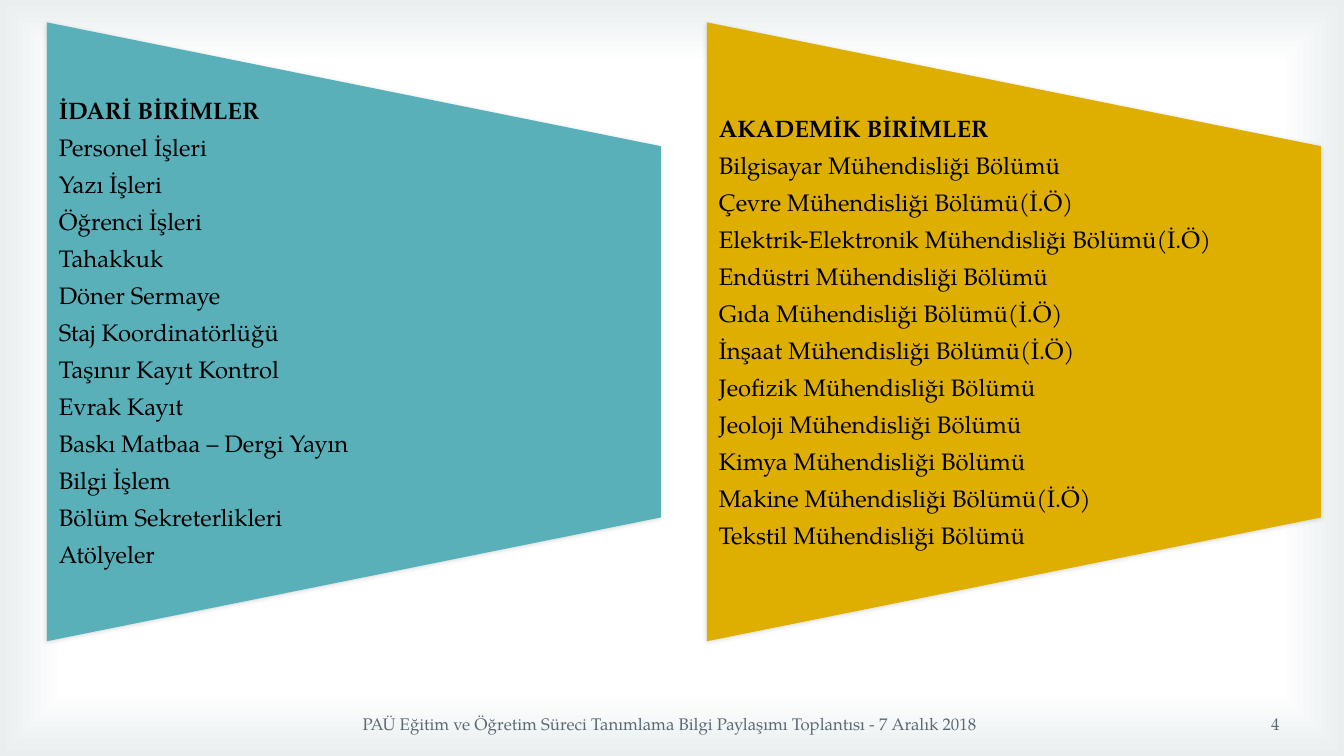
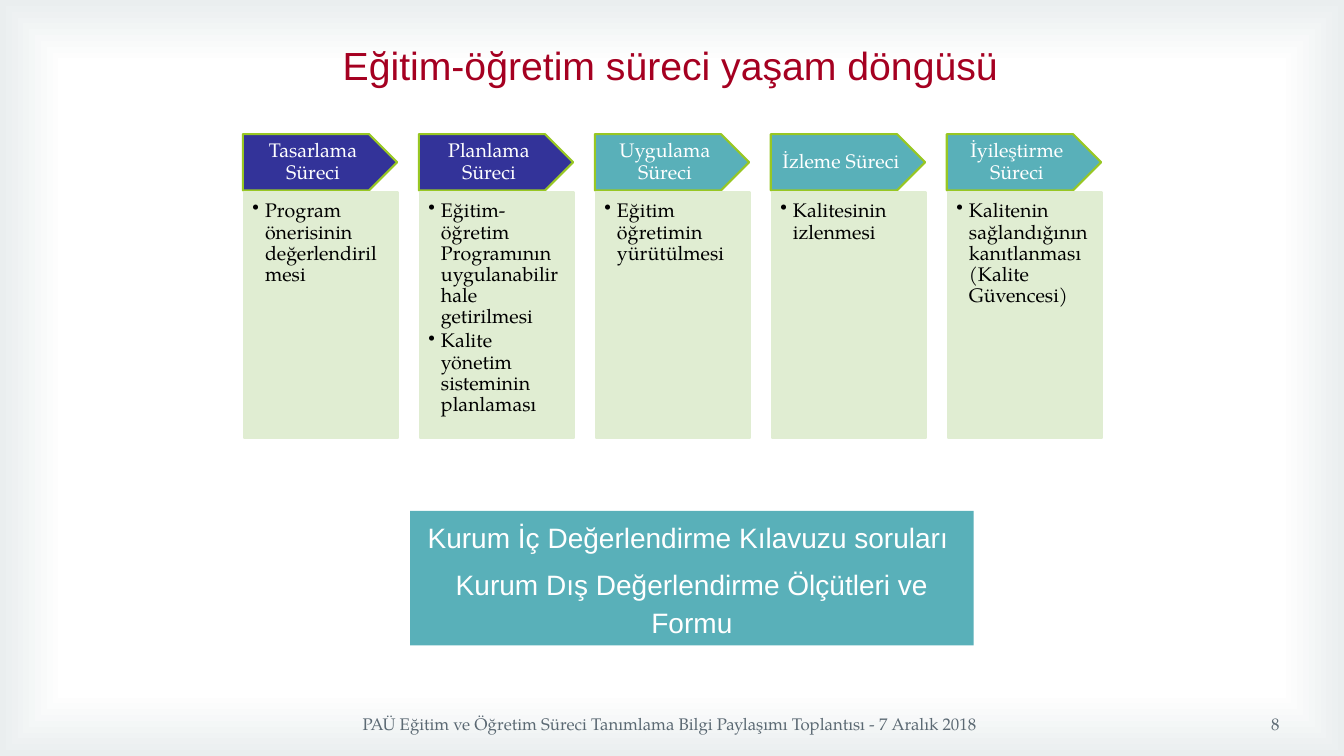
import lxml.etree
import pptx
import pptx.dml.color
import pptx.enum.shapes
import pptx.enum.text
import pptx.oxml.ns
import pptx.util

Pt = pptx.util.Pt
qn = pptx.oxml.ns.qn
SHAPES = pptx.enum.shapes.MSO_SHAPE
ALIGN = pptx.enum.text.PP_ALIGN
ANCHOR = pptx.enum.text.MSO_ANCHOR

SLIDE_WIDTH, SLIDE_HEIGHT = 960, 540
TITLE_ONLY, BLANK = 5, 6
SERIF, SANS = "TeX Gyre Pagella", "Arial"
TEAL, GOLD, INDIGO, LIME = "59B0B9", "DEAE00", "333399", "98C723"
PALE_GREEN, CRIMSON, SLATE = "E0EDD2", "A50021", "5B6973"
WHITE, BLACK, EDGE = "FFFFFF", "000000", "EAEEEF"

FOOTER = "PAÜ Eğitim ve Öğretim Süreci Tanımlama Bilgi Paylaşımı Toplantısı - 7 Aralık 2018"

FOOTER_STYLE = {
    "font": {"name": SERIF, "size": Pt(12)}, "color": SLATE,
    "frame": {"vertical_anchor": ANCHOR.MIDDLE},
}
TITLE_STYLE = {
    "font": {"name": SANS, "size": Pt(28)}, "color": CRIMSON,
    "paragraph": {"alignment": ALIGN.LEFT},
    "frame": {"vertical_anchor": ANCHOR.MIDDLE},
}
UNIT_STYLE = {
    "font": {"name": SERIF, "size": Pt(17)}, "color": BLACK,
    "paragraph": {"space_after": Pt(6)},
    "frame": {"vertical_anchor": ANCHOR.MIDDLE, "margin_left": Pt(8.5),
              "margin_right": Pt(8.5), "margin_top": 0, "margin_bottom": 0},
}
STEP_STYLE = {
    "font": {"name": SERIF, "size": Pt(14)}, "color": WHITE,
    "paragraph": {"alignment": ALIGN.CENTER, "line_spacing": 0.9, "space_after": Pt(4.9)},
    "frame": {"vertical_anchor": ANCHOR.MIDDLE, "margin_left": Pt(8),
              "margin_right": Pt(8), "margin_top": Pt(4), "margin_bottom": Pt(4)},
}
TASK_STYLE = {
    "font": {"name": SERIF, "size": Pt(14)}, "color": BLACK,
    "paragraph": {"alignment": ALIGN.LEFT, "line_spacing": 0.9, "space_after": Pt(2.1)},
    "frame": {"vertical_anchor": ANCHOR.TOP, "margin_left": Pt(6),
              "margin_right": Pt(8), "margin_top": Pt(6), "margin_bottom": Pt(8)},
}
CALLOUT_STYLE = {
    "font": {"name": SANS, "size": Pt(20)}, "color": WHITE,
    "paragraph": {"alignment": ALIGN.CENTER, "line_spacing": 1.14, "space_after": Pt(6)},
    "frame": {"vertical_anchor": ANCHOR.TOP},
}

UNIT_PANELS = [
    (33.5, TEAL, [
        "İDARİ BİRİMLER", "Personel İşleri", "Yazı İşleri", "Öğrenci İşleri",
        "Tahakkuk", "Döner Sermaye", "Staj Koordinatörlüğü",
        "Taşınır Kayıt Kontrol", "Evrak Kayıt", "Baskı Matbaa – Dergi Yayın",
        "Bilgi İşlem", "Bölüm Sekreterlikleri", "Atölyeler"]),
    (505, GOLD, [
        "AKADEMİK BİRİMLER", "Bilgisayar Mühendisliği Bölümü",
        "Çevre Mühendisliği Bölümü(İ.Ö)",
        "Elektrik-Elektronik Mühendisliği Bölümü(İ.Ö)",
        "Endüstri Mühendisliği Bölümü", "Gıda Mühendisliği Bölümü(İ.Ö)",
        "İnşaat Mühendisliği Bölümü(İ.Ö)", "Jeofizik Mühendisliği Bölümü",
        "Jeoloji Mühendisliği Bölümü", "Kimya Mühendisliği Bölümü",
        "Makine Mühendisliği Bölümü(İ.Ö)", "Tekstil Mühendisliği Bölümü"]),
]
PROCESS_STEPS = [
    ("Tasarlama Süreci", INDIGO, ["Program önerisinin değerlendirilmesi"]),
    ("Planlama Süreci", INDIGO, [
        "Eğitim-öğretim Programının uygulanabilir hale getirilmesi",
        "Kalite yönetim sisteminin planlaması"]),
    ("Uygulama Süreci", TEAL, ["Eğitim öğretimin yürütülmesi"]),
    ("İzleme Süreci", TEAL, ["Kalitesinin izlenmesi"]),
    ("İyileştirme Süreci", TEAL, ["Kalitenin sağlandığının kanıtlanması (Kalite Güvencesi)"]),
]
CALLOUT_LINES = ["Kurum İç Değerlendirme Kılavuzu soruları ",
                 "Kurum Dış Değerlendirme Ölçütleri ve Formu"]


def rgb(color):
    return pptx.dml.color.RGBColor.from_string(color)


def apply_format(target, values):
    for name, value in values.items():
        setattr(target, name, value)


def write_text(shape, lines, style, **paragraph_format):
    """Fill the shape with one paragraph per line and return the paragraphs."""
    frame = shape.text_frame
    frame.text = "\n".join(lines)
    apply_format(frame, {"word_wrap": True, **style["frame"]})
    for paragraph in frame.paragraphs:
        apply_format(paragraph, {**style.get("paragraph", {}), **paragraph_format})
        for run in paragraph.runs:
            apply_format(run.font, style["font"])
            run.font.color.rgb = rgb(style["color"])
    return frame.paragraphs


def add_text(slide, box, lines, style, **paragraph_format):
    shape = slide.shapes.add_textbox(*map(Pt, box))
    return write_text(shape, lines, style, **paragraph_format)


def add_filled_shape(slide, kind, box, fill, line=None):
    shape = slide.shapes.add_shape(kind, *map(Pt, box))
    shape.shadow.inherit = False
    shape.fill.solid()
    shape.fill.fore_color.rgb = rgb(fill)
    if line:
        shape.line.color.rgb = rgb(line)
        shape.line.width = Pt(1.5)
    else:
        shape.line.fill.background()
    return shape


def add_soft_shadow(shape):
    effects = shape._element.spPr.find(qn("a:effectLst"))
    shadow = lxml.etree.SubElement(
        effects, qn("a:outerShdw"), blurRad=str(Pt(3)), dist=str(Pt(1)),
        dir="5400000", rotWithShape="0")
    color = lxml.etree.SubElement(shadow, qn("a:srgbClr"), val=BLACK)
    lxml.etree.SubElement(color, qn("a:alpha"), val="15000")


def add_bullet(paragraph, indent=9):
    properties = paragraph._p.get_or_add_pPr()
    properties.set("marL", str(Pt(indent)))
    properties.set("indent", str(-Pt(indent)))
    lxml.etree.SubElement(properties, qn("a:buChar"), char="•")


def set_vignette(master):
    """Give every slide a white background that darkens towards its edges."""
    fill = master.background.fill
    fill.gradient()
    for stop, position, color in zip(fill.gradient_stops, (0.83, 1), (WHITE, EDGE)):
        stop.position = position
        stop.color.rgb = rgb(color)
    gradient = master._element.find(".//" + qn("p:bgPr")).find(qn("a:gradFill"))
    linear = gradient.find(qn("a:lin"))
    rectangle = lxml.etree.Element(qn("a:path"), {"path": "rect"})
    sides = dict.fromkeys("ltrb", "50000")
    lxml.etree.SubElement(rectangle, qn("a:fillToRect"), sides)
    gradient.replace(linear, rectangle)


def add_slide(presentation, layout, number):
    slide = presentation.slides.add_slide(presentation.slide_layouts[layout])
    add_text(slide, (111, 502.5, 735, 29), [FOOTER], FOOTER_STYLE, alignment=ALIGN.CENTER)
    add_text(slide, (697, 502.5, 224, 29), [str(number)], FOOTER_STYLE, alignment=ALIGN.RIGHT)
    return slide


def add_unit_panel(slide, left, color, lines):
    """Add a trapezoid narrowing to the right, with a list whose first line is bold."""
    top, width, height = 16, 438.5, 442
    shift = (height - width) / 2
    panel = add_filled_shape(slide, SHAPES.FLOWCHART_MANUAL_OPERATION,
                             (left - shift, top + shift, height, width), color)
    panel.rotation = 270
    add_soft_shadow(panel)
    list_height = height * 0.6
    paragraphs = add_text(
        slide, (left, top + (height - list_height) / 2, width, list_height),
        lines, UNIT_STYLE)
    paragraphs[0].runs[0].font.bold = True


def add_process_step(slide, index, name, color, tasks):
    left, width = 173.5 + 125.7 * index, 110.2
    header = add_filled_shape(slide, SHAPES.PENTAGON, (left, 95.8, width, 40.2), color, LIME)
    write_text(header, [name], STEP_STYLE)
    body = add_filled_shape(slide, SHAPES.RECTANGLE, (left + 0.8, 137.5, width, 175.5),
                            PALE_GREEN, PALE_GREEN)
    for paragraph in write_text(body, tasks, TASK_STYLE):
        add_bullet(paragraph)


def set_title(slide, text, box):
    title = slide.shapes.title
    title.left, title.top, title.width, title.height = map(Pt, box)
    write_text(title, [text], TITLE_STYLE)


def main():
    presentation = pptx.Presentation()
    presentation.slide_width = Pt(SLIDE_WIDTH)
    presentation.slide_height = Pt(SLIDE_HEIGHT)
    set_vignette(presentation.slide_master)

    units_slide = add_slide(presentation, BLANK, 4)
    for left, color, lines in UNIT_PANELS:
        add_unit_panel(units_slide, left, color, lines)

    cycle_slide = add_slide(presentation, TITLE_ONLY, 8)
    set_title(cycle_slide, "Eğitim-öğretim süreci yaşam döngüsü", (237.6, 26, 496, 41))
    for index, step in enumerate(PROCESS_STEPS):
        add_process_step(cycle_slide, index, *step)
    callout = add_filled_shape(cycle_slide, SHAPES.RECTANGLE, (293, 365, 402.5, 96), TEAL)
    write_text(callout, CALLOUT_LINES, CALLOUT_STYLE)

    presentation.save("out.pptx")


if __name__ == "__main__":
    main()
